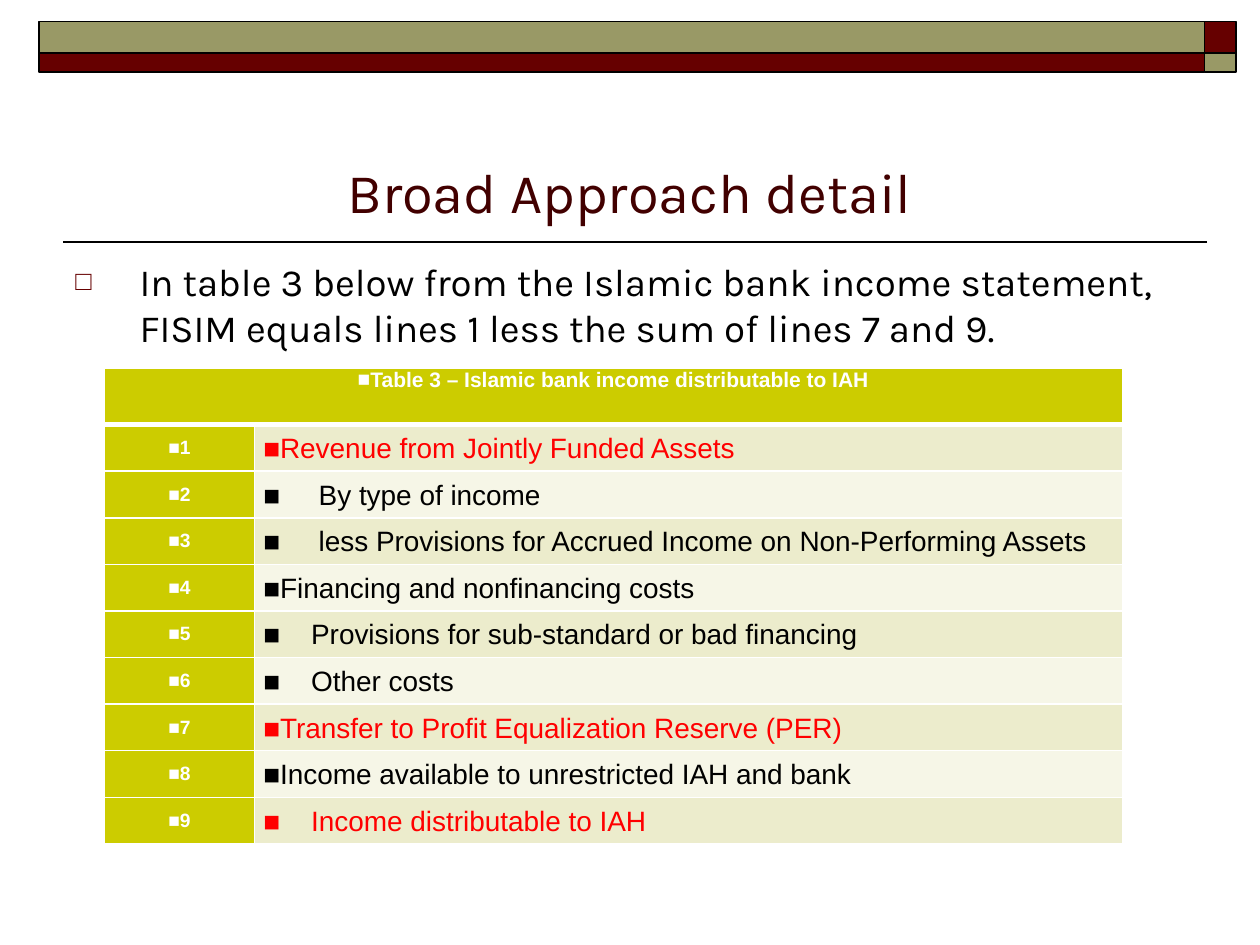
from dataclasses import dataclass
from lxml.etree import SubElement
from pptx import Presentation
from pptx.dml.color import RGBColor
from pptx.enum.shapes import MSO_CONNECTOR as Connector, MSO_SHAPE as Shape
from pptx.enum.text import MSO_ANCHOR as Anchor, PP_ALIGN as Align
from pptx.oxml.ns import qn
from pptx.util import Inches, Pt


@dataclass(frozen=True)
class Theme:
    heading_font: str = "Karla"
    table_font: str = "Arial"
    maroon: str = "660000"
    olive: str = "999966"
    title_color: str = "420000"
    black: str = "000000"
    white: str = "FFFFFF"
    red: str = "FF0000"
    lime: str = "CCCC00"
    stripes: tuple = ("ECECCC", "F6F6E7")
    title_size: int = 32
    body_size: int = 22
    row_size: int = 16
    caption_size: int = 12
    number_size: int = 11


class SlideBuilder:
    def __init__(self, page, theme):
        self.page = page
        self.theme = theme

    def add_span(self, para, text, font, size, color, bold=False):
        span = para.add_run()
        span.text = text
        span.font.name = font
        span.font.size = Pt(size)
        span.font.bold = bold
        span.font.color.rgb = RGBColor.from_string(color)

    def add_bullet(self, para, char, indent=0, color=None, percent=100):
        props = para._p.get_or_add_pPr()
        props.set("marL", str(Inches(indent)))
        props.set("indent", str(-Inches(indent)))
        if color:
            holder = SubElement(props, qn("a:buClr"))
            SubElement(holder, qn("a:srgbClr"), val=color)
        SubElement(props, qn("a:buSzPct"), val=str(percent * 1000))
        SubElement(props, qn("a:buFont"), typeface=self.theme.table_font)
        SubElement(props, qn("a:buChar"), char=char)

    def add_band(self, left, top, width, height, color):
        band = self.page.shapes.add_shape(
            Shape.RECTANGLE, Inches(left), Inches(top), Inches(width), Inches(height))
        band.shadow.inherit = False
        band.fill.solid()
        band.fill.fore_color.rgb = RGBColor.from_string(color)
        band.line.color.rgb = RGBColor.from_string(self.theme.black)
        band.line.width = Pt(1)

    def add_rule(self, start, end, top):
        rule = self.page.shapes.add_connector(
            Connector.STRAIGHT, Inches(start), Inches(top), Inches(end), Inches(top))
        rule.line.color.rgb = RGBColor.from_string(self.theme.black)
        rule.line.width = Pt(1)
        SubElement(rule._element.spPr, qn("a:effectLst"))

    def add_title(self, text):
        title = self.page.shapes.title
        title.left, title.top = Inches(0.5), Inches(0.58)
        title.width, title.height = Inches(9), Inches(1.25)
        title.text_frame.vertical_anchor = Anchor.BOTTOM
        para = title.text_frame.paragraphs[0]
        para.alignment = Align.CENTER
        theme = self.theme
        self.add_span(para, text, theme.heading_font, theme.title_size, theme.title_color)

    def add_body(self, text):
        box = self.page.shapes.add_textbox(Inches(0.5), Inches(2), Inches(9), Inches(4.7))
        box.text_frame.word_wrap = True
        para = box.text_frame.paragraphs[0]
        theme = self.theme
        para.space_before = Pt(0.2 * theme.body_size)
        self.add_bullet(para, "□", 0.51, theme.maroon, 70)
        self.add_span(para, text, theme.heading_font, theme.body_size, theme.black)

    def style_cell(self, cell, fill, bottom=1):
        cell.margin_left = cell.margin_right = Inches(0.07)
        cell.margin_top = cell.margin_bottom = 0
        props = cell._tc.get_or_add_tcPr()
        for side, width in (("L", 1), ("R", 1), ("T", 1), ("B", bottom)):
            border = SubElement(props, qn(f"a:ln{side}"), w=str(Pt(width)))
            paint = SubElement(border, qn("a:solidFill"))
            SubElement(paint, qn("a:srgbClr"), val=self.theme.white)
        cell.fill.solid()
        cell.fill.fore_color.rgb = RGBColor.from_string(fill)

    def fill_row(self, number, cells, text, indent, color):
        theme = self.theme
        number_cell, label_cell = cells
        self.style_cell(number_cell, theme.lime)
        self.style_cell(label_cell, theme.stripes[(number - 1) % 2])
        for cell in cells:
            cell.vertical_anchor = Anchor.MIDDLE
            para = cell.text_frame.paragraphs[0]
            para.space_before = para.space_after = Pt(2)
        para = number_cell.text_frame.paragraphs[0]
        para.alignment = Align.CENTER
        self.add_bullet(para, "■")
        self.add_span(para, str(number), theme.table_font, theme.number_size, theme.white, True)
        para = label_cell.text_frame.paragraphs[0]
        para.line_spacing = 1.07
        self.add_bullet(para, "■", indent)
        self.add_span(para, text, theme.table_font, theme.row_size, color)

    def add_income_table(self, caption, lines):
        theme = self.theme
        table = self.page.shapes.add_table(
            len(lines) + 1, 2, Inches(0.83), Inches(2.92), Inches(8.08), Inches(3.79)).table
        for column, width in zip(table.columns, (1.19, 6.89)):
            column.width = Inches(width)
        for index, row in enumerate(table.rows):
            row.height = Inches(0.37 if index else 0.45)
        for cell in table.rows[0].cells:
            self.style_cell(cell, theme.lime, bottom=3)
        header = table.cell(0, 0)
        header.merge(table.cell(0, 1))
        para = header.text_frame.paragraphs[0]
        para.alignment = Align.CENTER
        para.space_before = Pt(0.2 * theme.caption_size)
        self.add_bullet(para, "■")
        self.add_span(para, caption, theme.table_font, theme.caption_size, theme.white, True)
        for number, (text, indent, color) in enumerate(lines, 1):
            cells = [table.cell(number, column) for column in range(2)]
            self.fill_row(number, cells, text, indent, color)


def main():
    deck = Presentation()
    deck.slide_width, deck.slide_height = Inches(10), Inches(7.5)
    theme = Theme()
    builder = SlideBuilder(deck.slides.add_slide(deck.slide_layouts[5]), theme)

    builder.add_rule(9.58, 0.5, 1.92)
    for top, height, wide_color, corner_color in (
        (0.17, 0.25, theme.olive, theme.maroon),
        (0.42, 0.15, theme.maroon, theme.olive),
    ):
        builder.add_band(0.31, top, 9.25, height, wide_color)
        builder.add_band(9.56, top, 0.25, height, corner_color)

    builder.add_title("Broad Approach detail")
    builder.add_body("In table 3 below from the Islamic bank income statement, "
                     "FISIM equals lines 1 less the sum of lines 7 and 9.")
    builder.add_income_table("Table 3 – Islamic bank income distributable to IAH", [
        ("Revenue from Jointly Funded Assets", 0, theme.red),
        ("By type of income", 0.44, theme.black),
        ("less Provisions for Accrued Income on Non-Performing Assets", 0.44, theme.black),
        ("Financing and nonfinancing costs", 0, theme.black),
        ("Provisions for sub-standard or bad financing", 0.38, theme.black),
        ("Other costs", 0.38, theme.black),
        ("Transfer to Profit Equalization Reserve (PER)", 0, theme.red),
        ("Income available to unrestricted IAH and bank", 0, theme.black),
        ("Income distributable to IAH", 0.38, theme.red),
    ])
    deck.save("out.pptx")


if __name__ == "__main__":
    main()
